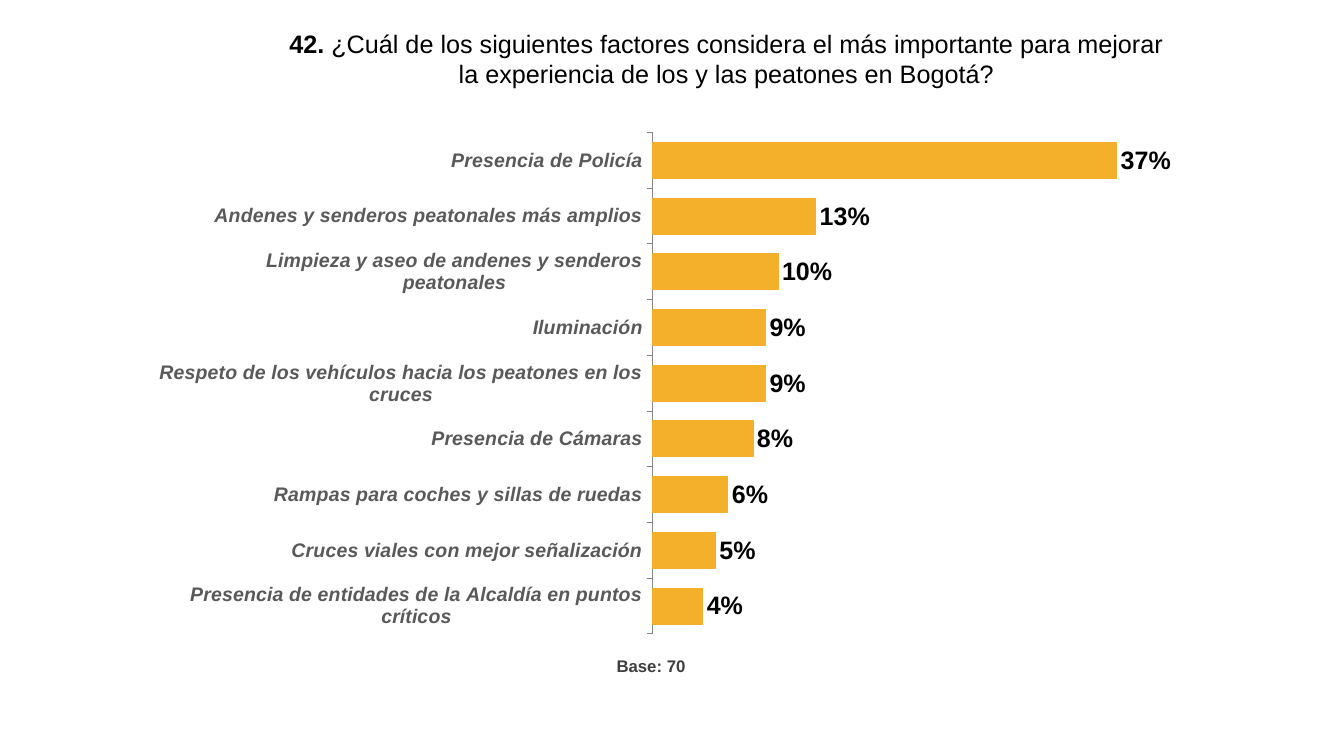
from lxml.etree import SubElement
from pptx import Presentation
from pptx.chart.data import CategoryChartData
from pptx.dml.color import RGBColor
from pptx.enum.chart import XL_CHART_TYPE, XL_LABEL_POSITION, XL_TICK_MARK
from pptx.enum.text import MSO_ANCHOR, MSO_AUTO_SIZE, PP_ALIGN
from pptx.oxml.ns import qn
from pptx.util import Pt

BLACK = RGBColor(0x00, 0x00, 0x00)
DARK_GRAY = RGBColor(0x3F, 0x3F, 0x3F)
LABEL_GRAY = RGBColor(0x59, 0x59, 0x59)
AXIS_GRAY = RGBColor(0x86, 0x86, 0x86)
AMBER = RGBColor(0xF5, 0xB0, 0x2B)

QUESTION = (
    "¿Cuál de los siguientes factores considera el más importante para mejorar "
    "la experiencia de los y las peatones en Bogotá?"
)
# Listed from the bottom bar to the top bar
FACTORS = {
    "Presencia de entidades de la Alcaldía en puntos críticos": 0.04,
    "Cruces viales con mejor señalización": 0.05,
    "Rampas para coches y sillas de ruedas": 0.06,
    "Presencia de Cámaras": 0.08,
    "Respeto de los vehículos hacia los peatones en los cruces": 0.09,
    "Iluminación": 0.09,
    "Limpieza y aseo de andenes y senderos peatonales": 0.1,
    "Andenes y senderos peatonales más amplios": 0.13,
    "Presencia de Policía": 0.37,
}
PLOT_AREA = {"x": 0.373, "y": 0, "w": 0.386, "h": 0.917}


def set_values(target, values):
    for name, value in values.items():
        setattr(target, name, value)


def format_font(font, size, color, **values):
    set_values(font, {"name": "Arial", "size": Pt(size), **values})
    font.color.rgb = color


def place(shape, left, top, width, height):
    set_values(shape, {"left": Pt(left), "top": Pt(top),
                       "width": Pt(width), "height": Pt(height)})


def write_text(shape, runs, size, color, alignment, line_spacing):
    """Fill a text shape with one paragraph of (text, bold) runs."""
    set_values(shape.text_frame, {
        "word_wrap": True,
        "auto_size": MSO_AUTO_SIZE.NONE,
        "vertical_anchor": MSO_ANCHOR.TOP,
    })
    paragraph = shape.text_frame.paragraphs[0]
    set_values(paragraph, {"alignment": alignment, "line_spacing": line_spacing})
    for text, bold in runs:
        run = paragraph.add_run()
        run.text = text
        format_font(run.font, size, color, bold=bold)


def set_plot_layout(chart, fractions):
    """Fix the inner plot area as fractions of the chart frame."""
    plot_area = chart._chartSpace.chart.plotArea
    for old_layout in plot_area.findall(qn("c:layout")):
        plot_area.remove(old_layout)
    layout = plot_area.makeelement(qn("c:layout"))
    plot_area.insert(0, layout)
    manual = SubElement(layout, qn("c:manualLayout"))
    settings = {"layoutTarget": "inner", "xMode": "edge", "yMode": "edge", **fractions}
    for name, value in settings.items():
        SubElement(manual, qn(f"c:{name}")).set("val", str(value))


def add_bar_chart(slide, factors):
    data = CategoryChartData(number_format="0%")
    data.categories = list(factors)
    data.add_series("Series 1", list(factors.values()))
    chart = slide.shapes.add_chart(
        XL_CHART_TYPE.BAR_CLUSTERED,
        Pt(113.8), Pt(94.3), Pt(934.6), Pt(391), data,
    ).chart
    set_values(chart, {"has_title": False, "has_legend": False})
    format_font(chart.font, 18, BLACK)
    set_plot_layout(chart, PLOT_AREA)

    # Axes
    set_values(chart.value_axis, {
        "visible": False, "has_major_gridlines": False,
        "minimum_scale": 0, "maximum_scale": 0.4,
    })
    category_axis = chart.category_axis
    set_values(category_axis, {
        "major_tick_mark": XL_TICK_MARK.OUTSIDE,
        "minor_tick_mark": XL_TICK_MARK.NONE,
        "has_major_gridlines": False,
    })
    category_axis.format.line.color.rgb = AXIS_GRAY
    category_axis.format.line.width = Pt(0.75)
    format_font(category_axis.tick_labels.font, 14, LABEL_GRAY, bold=True, italic=True)

    # Bars and their values
    plot = chart.plots[0]
    set_values(plot, {"gap_width": 55, "vary_by_categories": False})
    series = plot.series[0]
    series.format.fill.solid()
    series.format.fill.fore_color.rgb = AMBER
    series.format.line.color.rgb = AMBER
    series.format.line.width = Pt(0.75)
    labels = series.data_labels
    set_values(labels, {
        "show_value": True,
        "position": XL_LABEL_POSITION.OUTSIDE_END,
        "number_format": "0%",
        "number_format_is_linked": False,
    })
    format_font(labels.font, 18, BLACK, bold=True)


def main():
    presentation = Presentation()
    set_values(presentation, {"slide_width": Pt(960), "slide_height": Pt(540)})
    slide = presentation.slides.add_slide(presentation.slide_layouts[5])

    # Question
    title = slide.shapes.title
    place(title, 193.7, 16.6, 650.2, 51.1)
    write_text(title, [("42. ", True), (QUESTION, False)], 18, BLACK, PP_ALIGN.CENTER, 1.0)

    # Answers
    add_bar_chart(slide, FACTORS)

    # Sample size
    base = slide.shapes.add_textbox(Pt(426.2), Pt(467.3), Pt(70.6), Pt(18))
    write_text(base, [("Base: 70", True)], 12, DARK_GRAY, PP_ALIGN.RIGHT, 0.83)

    presentation.save("out.pptx")


if __name__ == "__main__":
    main()
